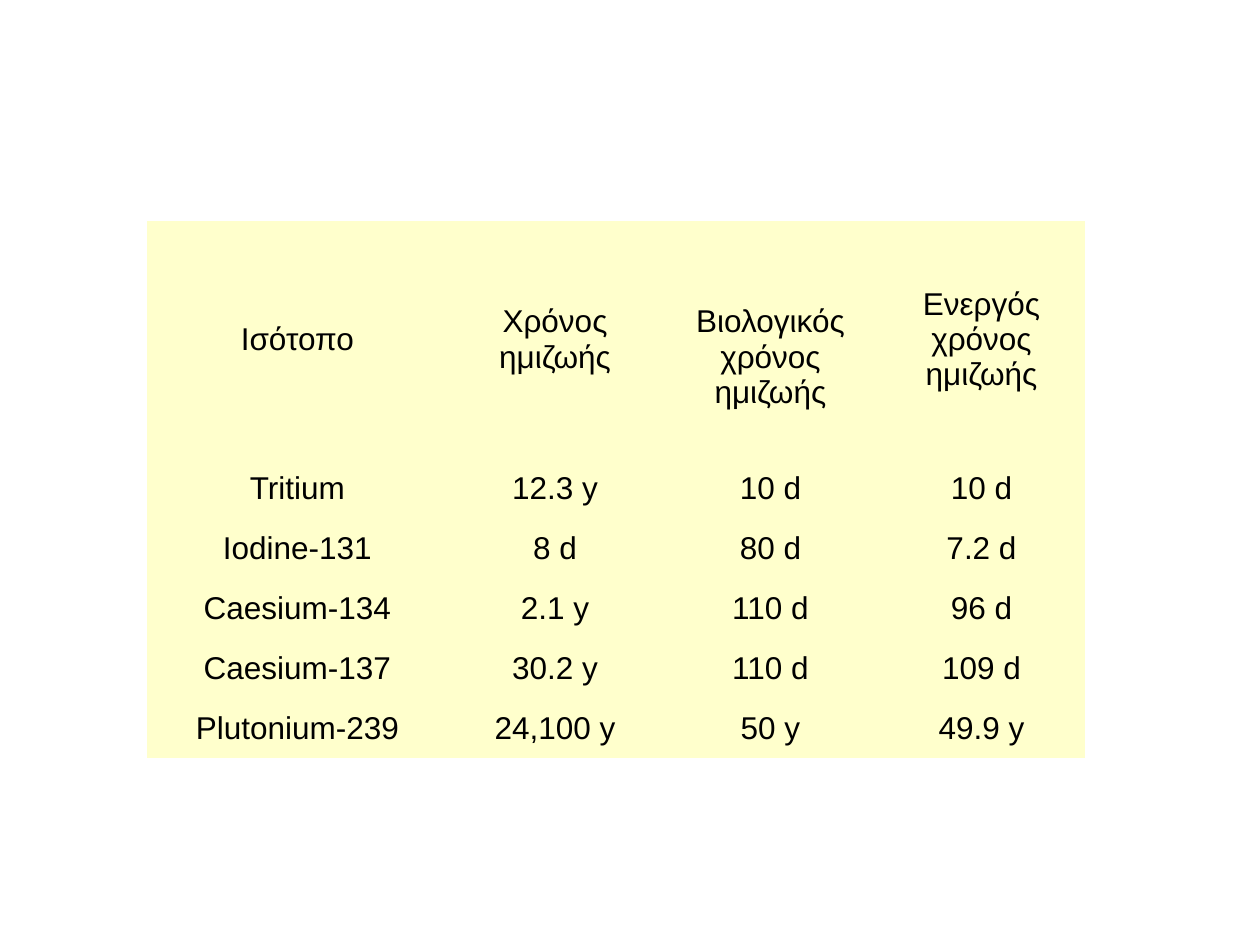
from pptx import Presentation
from pptx.dml.color import RGBColor
from pptx.enum.text import MSO_ANCHOR, PP_ALIGN
from pptx.util import Inches, Pt

MIDDLE = MSO_ANCHOR.MIDDLE
CENTER = PP_ALIGN.CENTER
COLORS = {"cell": "FFFFCC", "text": "000000"}
FONT = "Arial"
NO_STYLE_NO_GRID = "{2D5ABB26-0587-4C30-8999-92F81FD0307C}"

HALF_LIVES = [
    ["Ισότοπο", "Χρόνος ημιζωής", "Βιολογικός χρόνος ημιζωής", "Ενεργός χρόνος ημιζωής"],
    ["Tritium", "12.3 y", "10 d", "10 d"],
    ["Iodine-131", "8 d", "80 d", "7.2 d"],
    ["Caesium-134", "2.1 y", "110 d", "96 d"],
    ["Caesium-137", "30.2 y", "110 d", "109 d"],
    ["Plutonium-239", "24,100 y", "50 y", "49.9 y"],
]
COL_WIDTHS = [2.38, 1.71, 1.71, 1.64]
HEADER_HEIGHT = 1.89


def fill_cell(cell, text):
    cell.fill.solid()
    cell.fill.fore_color.rgb = RGBColor.from_string(COLORS["cell"])
    cell.vertical_anchor = MIDDLE
    p = cell.text_frame.paragraphs[0]
    p.alignment = CENTER
    r = p.add_run()
    r.text = text
    r.font.name = FONT
    r.font.size = Pt(18)
    r.font.color.rgb = RGBColor.from_string(COLORS["text"])


def add_half_life_table(s, left, top, width, height):
    rows, cols = len(HALF_LIVES), len(COL_WIDTHS)
    table = s.shapes.add_table(rows, cols, Inches(left), Inches(top),
                               Inches(width), Inches(height)).table
    table.first_row = table.horz_banding = False
    table._tbl.tblPr[0].text = NO_STYLE_NO_GRID

    for column, col_width in zip(table.columns, COL_WIDTHS):
        column.width = Inches(col_width)
    body_height = (height - HEADER_HEIGHT) / (rows - 1)
    for i, texts in enumerate(HALF_LIVES):
        table.rows[i].height = Inches(body_height if i else HEADER_HEIGHT)
        for j, text in enumerate(texts):
            fill_cell(table.cell(i, j), text)

    # The biological half-life heading sits half a line lower than the others
    table.cell(0, 2).margin_top = Inches(0.33)


def main():
    prs = Presentation()
    prs.slide_width, prs.slide_height = Inches(10), Inches(7.5)
    s = prs.slides.add_slide(prs.slide_layouts[6])
    add_half_life_table(s, 1.17, 1.75, 7.43, 4.27)
    prs.save("out.pptx")


if __name__ == "__main__":
    main()
